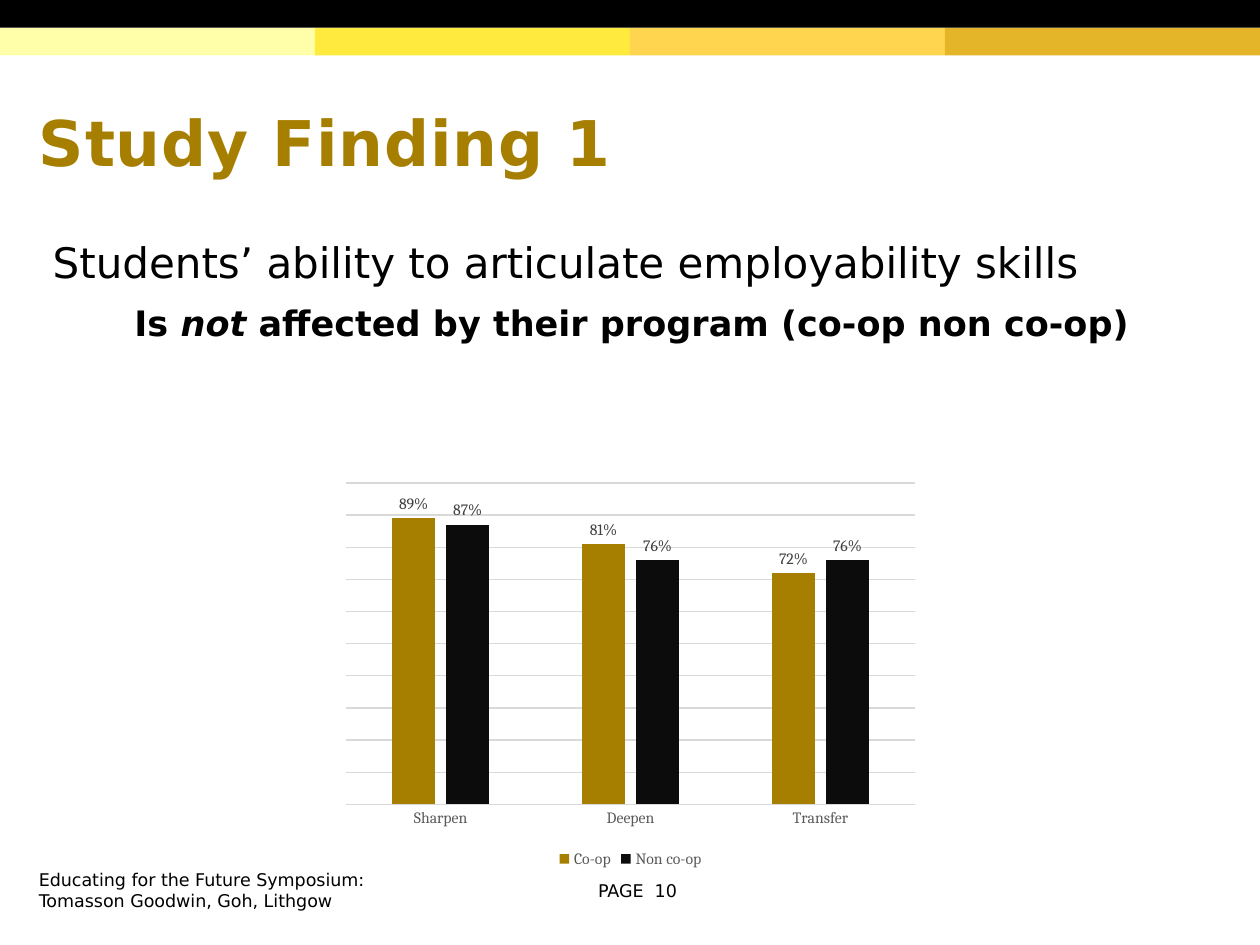
from pptx import Presentation
from pptx.chart.data import CategoryChartData
from pptx.dml.color import RGBColor
from pptx.enum.chart import (XL_CHART_TYPE as ChartType, XL_LABEL_POSITION as LabelPosition,
                             XL_LEGEND_POSITION as LegendPosition, XL_TICK_MARK as TickMark)
from pptx.enum.shapes import MSO_SHAPE as Shape
from pptx.enum.text import MSO_ANCHOR as Anchor, PP_ALIGN as Align
from pptx.util import Inches, Pt

WIDTH, HEIGHT = 10, 7.5
BAND = 0.22
GOLD, BLACK, GRID = "A77F00", "000000", "D9D9D9"
SANS, SERIF = "DejaVu Sans", "Cambria"


def rgb(value):
    return RGBColor.from_string(value)


def style_font(font, size, color, name=SANS, bold=False, italic=False):
    font.size, font.name, font.bold, font.italic = Pt(size), name, bold, italic
    font.color.rgb = rgb(color)


def add_bar(slide, box, color):
    bar = slide.shapes.add_shape(Shape.RECTANGLE, *map(Inches, box))
    bar.shadow.inherit = False
    bar.fill.solid()
    bar.fill.fore_color.rgb = rgb(color)
    bar.line.fill.background()


def add_header(slide, box, colors):
    """A black band above a row of equal colour blocks."""
    left, top, width, height = box
    row, column = height / 2, width / len(colors)
    for index, color in enumerate(colors):
        add_bar(slide, (left + index * column, top + row, column, row), color)
    add_bar(slide, (left, top, width, row), BLACK)


def add_frame(slide, box, anchor=Anchor.MIDDLE):
    frame = slide.shapes.add_textbox(*map(Inches, box)).text_frame
    frame.word_wrap = True
    frame.vertical_anchor = anchor
    return frame


def add_run(paragraph, text, size, color=BLACK, **style):
    run = paragraph.add_run()
    run.text = text
    style_font(run.font, size, color, **style)
    return run


def add_title(slide, box, text):
    frame = add_frame(slide, box)
    frame.margin_top = Inches(0.1)
    paragraph = frame.paragraphs[0]
    paragraph.line_spacing = 0.85
    run = add_run(paragraph, text, 36, GOLD, bold=True)
    run.font._element.set("spc", "50")


def add_finding(slide, box, statement, result):
    """A statement line with a centred bold result of (text, italic) runs below."""
    frame = add_frame(slide, box, Anchor.TOP)
    paragraph = frame.paragraphs[0]
    paragraph.space_after = Pt(8)
    add_run(paragraph, statement, 24)
    paragraph = frame.add_paragraph()
    paragraph.alignment = Align.CENTER
    for text, italic in result:
        add_run(paragraph, text, 20, bold=True, italic=italic)


def add_footer(slide, box, lines, alignment=Align.LEFT):
    frame = add_frame(slide, box)
    for index, line in enumerate(lines):
        paragraph = frame.add_paragraph() if index else frame.paragraphs[0]
        paragraph.alignment = alignment
        add_run(paragraph, line, 10)


def style_line(line, color):
    line.color.rgb = rgb(color)
    line.width = Pt(0.75)


def add_skill_chart(slide, box, categories, series):
    """series holds (name, values, color) rows."""
    data = CategoryChartData(number_format="0%")
    data.categories = categories
    for name, values, _ in series:
        data.add_series(name, values)
    chart = slide.shapes.add_chart(ChartType.COLUMN_CLUSTERED, *map(Inches, box), data).chart
    style_font(chart.font, 10, BLACK, SERIF)
    chart.has_title = False
    chart.has_legend = True
    chart.legend.position = LegendPosition.BOTTOM
    chart.legend.include_in_layout = False
    style_font(chart.legend.font, 9, "595959", SERIF)

    category_axis = chart.category_axis
    category_axis.major_tick_mark = TickMark.NONE
    style_font(category_axis.tick_labels.font, 9, "595959", SERIF)
    style_line(category_axis.format.line, GRID)

    value_axis = chart.value_axis
    value_axis.visible = False
    value_axis.minimum_scale, value_axis.maximum_scale = 0, 1
    value_axis.major_unit = 0.1
    value_axis.has_major_gridlines = True
    style_line(value_axis.major_gridlines.format.line, GRID)

    plot = chart.plots[0]
    plot.gap_width, plot.overlap = 219, -27
    plot.vary_by_categories = False
    for column, (_, _, color) in zip(plot.series, series):
        column.format.fill.solid()
        column.format.fill.fore_color.rgb = rgb(color)
        labels = column.data_labels
        labels.show_value = True
        labels.position = LabelPosition.OUTSIDE_END
        labels.number_format, labels.number_format_is_linked = "0%", False
        style_font(labels.font, 9, "404040", SERIF)


def main():
    presentation = Presentation()
    presentation.slide_width, presentation.slide_height = Inches(WIDTH), Inches(HEIGHT)
    slide = presentation.slides.add_slide(presentation.slide_layouts[6])
    margin, footer_top, footer_height = 0.21, 6.93, 0.27

    add_header(slide, (0, 0, WIDTH, 2 * BAND), ["FFFFAA", "FFEA3D", "FFD54F", "E4B429"])
    add_title(slide, (margin, 0.47, 9.49, 1.34), "Study Finding 1")
    add_footer(slide, (margin, footer_top, 4.29, footer_height),
               ["Educating for the Future Symposium:", "Tomasson Goodwin, Goh, Lithgow"])
    add_footer(slide, (4.58, footer_top, 0.96, footer_height), ["PAGE  10"], Align.CENTER)
    add_finding(slide, (0.32, 1.83, 9.39, 0.95),
                "Students’ ability to articulate employability skills",
                [("Is ", False), ("not", True),
                 (" affected by their program (co-op non co-op)", False)])
    add_skill_chart(slide, (2.65, 3.77, 4.71, 3.16), ["Sharpen", "Deepen", "Transfer"],
                    [("Co-op", (0.89, 0.81, 0.72), GOLD),
                     ("Non co-op", (0.87, 0.76, 0.76), "0C0C0C")])
    presentation.save("out.pptx")


if __name__ == "__main__":
    main()
